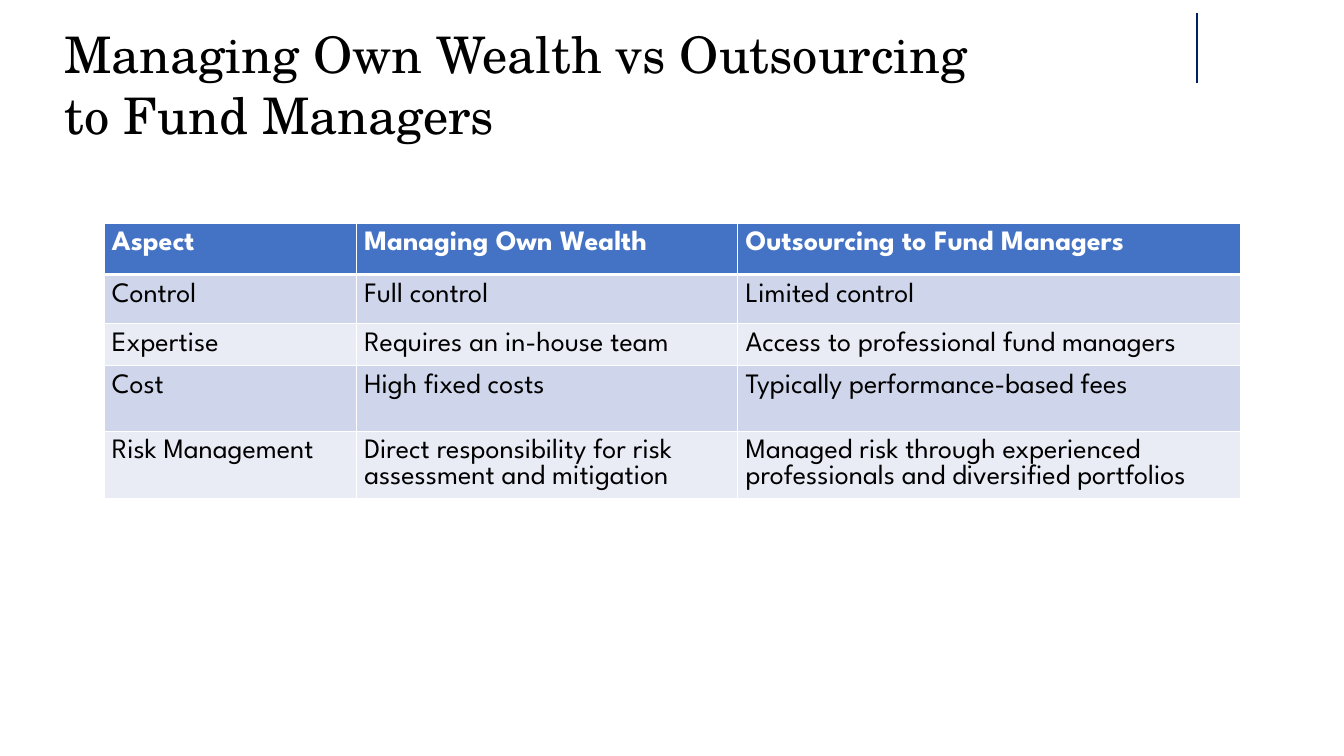
from lxml import etree
from pptx import Presentation
from pptx.dml.color import RGBColor
from pptx.enum import shapes
from pptx.oxml import ns
from pptx.util import Cm, Pt

WHITE = RGBColor(0xFF, 0xFF, 0xFF)
BLACK = RGBColor(0, 0, 0)
NAVY = RGBColor(0x00, 0x20, 0x60)
HEADER_BLUE = RGBColor(0x44, 0x72, 0xC4)
BAND_DARK = RGBColor(0xCF, 0xD5, 0xEA)
BAND_LIGHT = RGBColor(0xE9, 0xEB, 0xF5)

TITLE_LINES = ["Managing Own Wealth vs Outsourcing", "to Fund Managers"]
COMPARISON = [
    ("Aspect", "Managing Own Wealth", "Outsourcing to Fund Managers"),
    ("Control", "Full control", "Limited control"),
    ("Expertise", "Requires an in-house team", "Access to professional fund managers"),
    ("Cost", "High fixed costs", "Typically performance-based fees"),
    ("Risk Management", "Direct responsibility for risk assessment and mitigation",
     "Managed risk through experienced professionals and diversified portfolios"),
]
COLUMN_WIDTHS = [6.36, 9.61, 12.68]
ROW_HEIGHTS = [1.3, 1.24, 1.04, 1.65, 1.04]


def add_border(cell, side, points):
    border = etree.SubElement(cell._tc.get_or_add_tcPr(), ns.qn(f"a:{side}"), w=str(Pt(points)))
    fill = etree.SubElement(border, ns.qn("a:solidFill"))
    etree.SubElement(fill, ns.qn("a:srgbClr"), val=str(WHITE))


prs = Presentation()
prs.slide_width, prs.slide_height = Cm(33.87), Cm(19.05)
slide = prs.slides.add_slide(prs.slide_layouts[6])

accent = slide.shapes.add_connector(
    shapes.MSO_CONNECTOR.STRAIGHT, Cm(30.17), Cm(0.33), Cm(30.17), Cm(2.08))
accent.line.color.rgb = NAVY
accent.line.width = Pt(1.5)
etree.SubElement(accent._element.spPr, ns.qn("a:effectLst"))

comparison = slide.shapes.add_table(
    len(COMPARISON), len(COLUMN_WIDTHS), Cm(2.62), Cm(5.62),
    Cm(sum(COLUMN_WIDTHS)), Cm(sum(ROW_HEIGHTS))).table
for column, width in zip(comparison.columns, COLUMN_WIDTHS):
    column.width = Cm(width)
for row, height in zip(comparison.rows, ROW_HEIGHTS):
    row.height = Cm(height)

for r, aspect in enumerate(COMPARISON):
    header = r == 0
    for c, wording in enumerate(aspect):
        cell = comparison.cell(r, c)
        cell.text = wording
        cell.margin_left = cell.margin_right = Cm(0.2)
        cell.margin_top = cell.margin_bottom = Cm(0.2)
        for side in ("lnL", "lnR", "lnT", "lnB"):
            thick = (header and side == "lnB") or (r == 1 and side == "lnT")
            add_border(cell, side, 3 if thick else 1)
        cell.fill.solid()
        cell.fill.fore_color.rgb = HEADER_BLUE if header else (BAND_LIGHT, BAND_DARK)[r % 2]
        font = cell.text_frame.paragraphs[0].font
        font.name, font.size, font.bold = "League Spartan", Pt(20), header
        font.color.rgb = WHITE if header else BLACK

title = slide.shapes.add_textbox(Cm(1.37), Cm(0.46), Cm(31.88), Cm(3.33)).text_frame
title.word_wrap = True
title.text = "\n".join(TITLE_LINES)
for paragraph in title.paragraphs:
    paragraph.font.name, paragraph.font.size = "TeX Gyre Schola", Pt(36)
    paragraph.font.color.rgb = BLACK

prs.save("out.pptx")
